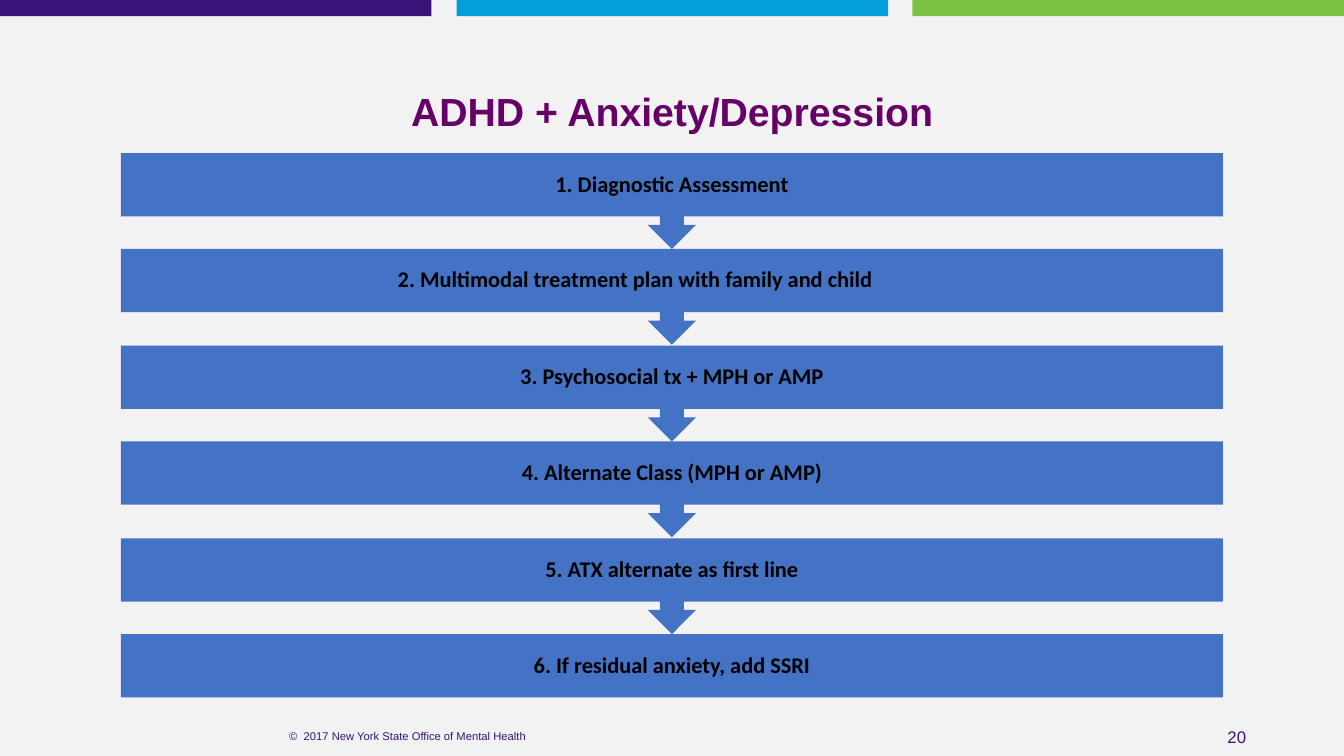
import pptx
import pptx.util
import pptx.dml.color
import pptx.enum.shapes
import pptx.enum.text
import pptx.oxml.ns
import lxml.etree

PX = 9144  # 100 px to the inch
SHAPE = pptx.enum.shapes.MSO_SHAPE
ALIGN = pptx.enum.text.PP_ALIGN


class Theme:
    background = "F2F2F2"
    stripes = ("391378", "049FDA", "7BBF43")
    step = "4472C4"
    step_text = "000000"
    title = "660066"
    footer = "391378"
    head_font, body_font = "Arial", "Calibri"
    title_size, step_size, number_size, footer_size = 28, 16, 12, 8


STEPS = (
    "1. Diagnostic Assessment",
    "2. Multimodal treatment plan with family and child\t",
    "3. Psychosocial tx + MPH or AMP",
    "4. Alternate Class (MPH or AMP)",
    "5. ATX alternate as first line",
    "6. If residual anxiety, add SSRI",
)


def px(*lengths):
    return [round(length) * PX for length in lengths]


def rgb(value):
    return pptx.dml.color.RGBColor.from_string(value)


def add_block(s, kind, box, color):
    sp = s.shapes.add_shape(kind, *px(*box))
    sp.shadow.inherit = False
    sp.fill.solid()
    sp.fill.fore_color.rgb = rgb(color)
    sp.line.fill.background()
    return sp


def add_tab_stop(p, position):
    qn = pptx.oxml.ns.qn
    tabs = lxml.etree.SubElement(p._p.get_or_add_pPr(), qn("a:tabLst"))
    lxml.etree.SubElement(tabs, qn("a:tab"), pos=str(px(position)[0]), algn="l")


def write(sp, text, font, size, color, align, inset, bold=False, spacing=None):
    tf = sp.text_frame
    tf.word_wrap = True
    tf.vertical_anchor = pptx.enum.text.MSO_ANCHOR.MIDDLE
    tf.margin_left, tf.margin_top, tf.margin_right, tf.margin_bottom = px(*[inset] * 4)
    p = tf.paragraphs[0]
    p.alignment = align
    p.line_spacing = spacing
    if "\t" in text:
        add_tab_stop(p, 544)
    r = p.add_run()
    r.text = text
    r.font.name = font
    r.font.size = pptx.util.Pt(size)
    r.font.bold = bold
    r.font.color.rgb = rgb(color)


def add_stripes(s, left, top, width, height):
    gap = 25
    stripe = (width - gap * (len(Theme.stripes) - 1)) / len(Theme.stripes)
    for i, color in enumerate(Theme.stripes):
        add_block(s, SHAPE.RECTANGLE, (left + i * (stripe + gap), top, stripe, height), color)


def add_title(s, left, top, width, height):
    sp = s.shapes.title
    sp.left, sp.top, sp.width, sp.height = px(left, top, width, height)
    write(sp, "ADHD + Anxiety/Depression", Theme.head_font, Theme.title_size,
          Theme.title, ALIGN.CENTER, 5, bold=True, spacing=0.9)


def add_steps(s, left, top, width, height):
    bar, arrow_width = 63, 48
    pitch = (height - bar) / (len(STEPS) - 1)
    for i, text in enumerate(STEPS):
        last = i == len(STEPS) - 1
        kind = SHAPE.RECTANGLE if last else SHAPE.DOWN_ARROW_CALLOUT
        box_height = bar if last else pitch
        sp = add_block(s, kind, (left, top + i * pitch, width, box_height), Theme.step)
        if not last:
            # Shaft width, half head width, head length, bar height
            half = arrow_width / 2 / pitch
            for n, value in enumerate((half, half, half, bar / pitch)):
                sp.adjustments[n] = value
        write(sp, text, Theme.body_font, Theme.step_size, Theme.step_text,
              ALIGN.CENTER, 12, bold=True, spacing=0.9)


def add_footer(s, left, top, width, height):
    # Copyright line at the left, page number at the right
    credit_width, number_width = 437, 60
    credit = s.shapes.add_textbox(*px(left, top, credit_width, height))
    write(credit, "©  2017 New York State Office of Mental Health", Theme.head_font,
          Theme.footer_size, Theme.footer, ALIGN.CENTER, 5)
    number = s.shapes.add_textbox(*px(left + width - number_width, top, number_width, height))
    write(number, "20", Theme.head_font, Theme.number_size, Theme.footer, ALIGN.RIGHT, 5)


def main():
    prs = pptx.Presentation()
    prs.slide_width, prs.slide_height = px(1333, 750)
    s = prs.slides.add_slide(prs.slide_layouts[5])
    s.background.fill.solid()
    s.background.fill.fore_color.rgb = rgb(Theme.background)
    add_stripes(s, 0, 0, 1333, 16)
    add_title(s, 106, 59, 1121, 108)
    add_steps(s, 120, 152, 1093, 540)
    add_footer(s, 186, 717, 1055, 27)
    prs.save("out.pptx")


if __name__ == "__main__":
    main()
